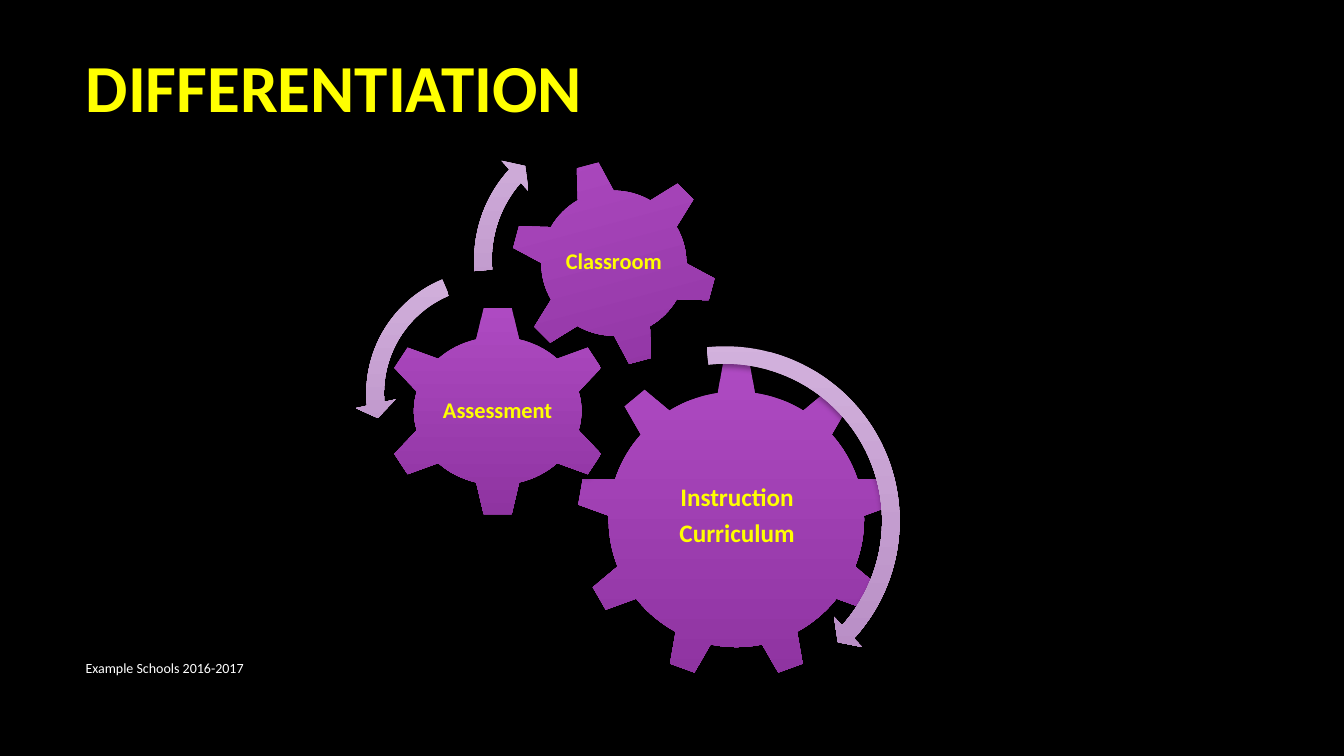
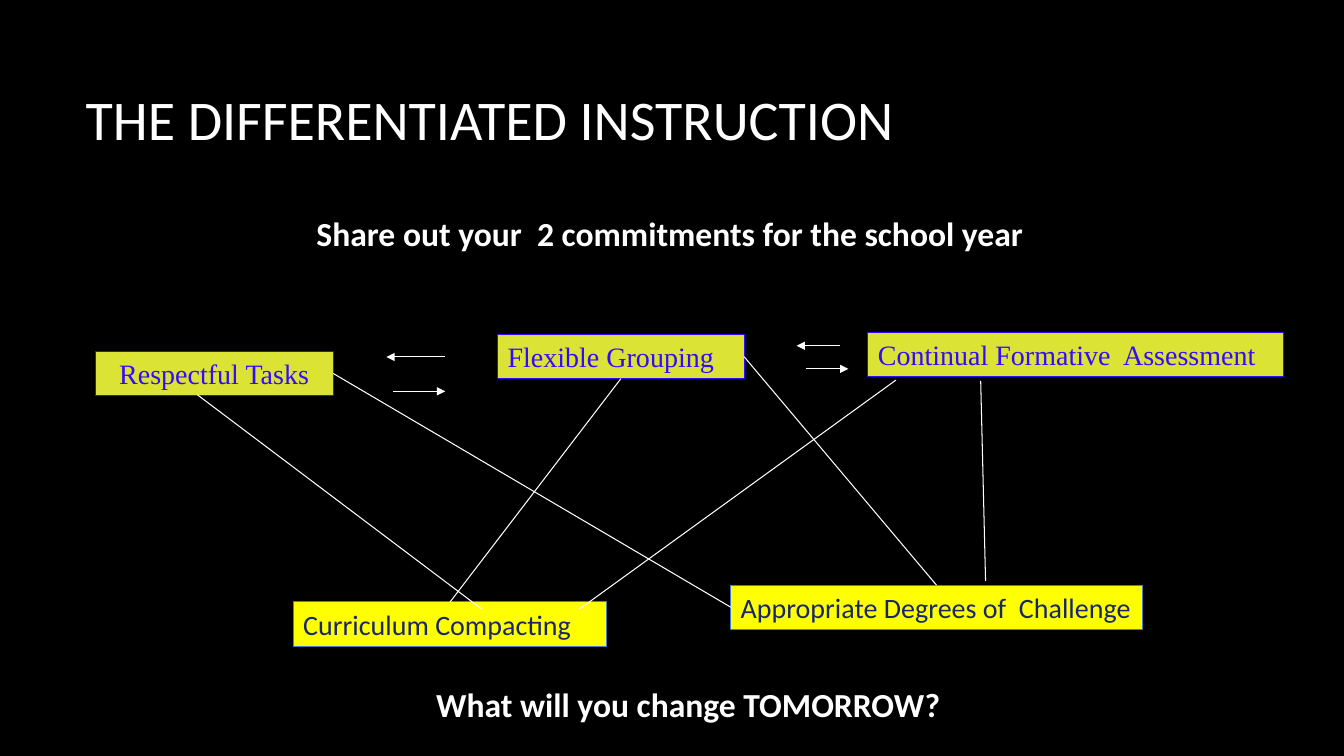
from lxml import etree
from pptx import Presentation
from pptx.dml.color import RGBColor
from pptx.enum import shapes, text
from pptx.oxml import ns
from pptx.util import Pt

BLACK, WHITE, YELLOW = "000000", "FFFFFF", "FFFF00"
VIOLET, LILAC = ("AE4AC2", "8F34A1"), ("D3B2DD", "B488C1")
LIME, INDIGO, BLUE, NAVY = "DBE334", "330AFF", "477BD1", "18276C"
LEFT, CENTER = text.PP_ALIGN.LEFT, text.PP_ALIGN.CENTER
TOP, LEFT_SIDE, BOTTOM, RIGHT_SIDE = range(4)


def color(hex_code):
    return RGBColor.from_string(hex_code)


def write(frame, lines, size, hex_code, bold=False, font="Calibri", align=LEFT):
    """Fill a text frame with one paragraph per line, centred vertically."""
    frame.word_wrap = True
    frame.vertical_anchor = text.MSO_ANCHOR.MIDDLE
    for index, line in enumerate(lines):
        paragraph = frame.paragraphs[0] if index == 0 else frame.add_paragraph()
        paragraph.alignment = align
        run = paragraph.add_run()
        run.text = line
        run.font.name, run.font.size, run.font.bold = font, Pt(size), bold
        run.font.color.rgb = color(hex_code)


prs = Presentation()
prs.slide_width, prs.slide_height = Pt(960), Pt(540)
background = prs.slide_master.background.fill
background.solid()
background.fore_color.rgb = color(BLACK)

slides = []
for heading, top, size, hex_code, bold in [
    ("DIFFERENTIATION", 4, 48, YELLOW, True),
    ("THE DIFFERENTIATED INSTRUCTION", 27, 40, WHITE, False),
]:
    slide = prs.slides.add_slide(prs.slide_layouts[5])
    title = slide.shapes.title
    title.left, title.top, title.width, title.height = Pt(54), Pt(top), Pt(798), Pt(114)
    write(title.text_frame, [heading], size, hex_code, bold)
    slides.append(slide)
gears_slide, links_slide = slides

# Slide 1: interlocking gears with turning arrows
footer = gears_slide.shapes.add_textbox(Pt(54), Pt(462), Pt(616), Pt(30))
write(footer.text_frame, ["Example Schools 2016-2017"], 10, WHITE)

KIND = shapes.MSO_SHAPE
for kind, left, top, width, height, rotation, adjustments, shades in [
    (KIND.GEAR_9, 412, 257, 228, 228, 0, [], VIOLET),
    (KIND.GEAR_6, 273, 218, 165, 151, 0, [], VIOLET),
    (KIND.GEAR_6, 364.5, 114, 148, 148, 345, [], VIOLET),
    (KIND.CIRCULAR_ARROW, 385, 239, 266, 266, 0,
     [0.047, 2.99, 25.289, 158.341, 0.055], LILAC),
    (KIND.LEFT_CIRCULAR_ARROW, 253.5, 184.5, 193, 193, 0,
     [0.065, 4.3, 104.891, 148.378, 0.075], LILAC),
    (KIND.CIRCULAR_ARROW, 330.5, 81.5, 208, 208, 0,
     [0.06, 3.941, 133.138, 105.082, 0.07], LILAC),
]:
    part = gears_slide.shapes.add_shape(kind, Pt(left), Pt(top), Pt(width), Pt(height))
    part.rotation = rotation
    for index, value in enumerate(adjustments):
        part.adjustments[index] = value
    part.fill.gradient()
    part.fill.gradient_angle = 270
    for stop, shade in zip(part.fill.gradient_stops, shades):
        stop.color.rgb = color(shade)
    part.line.fill.background()
    part.shadow.inherit = False
    effects = part._element.spPr.find(ns.qn("a:effectLst"))
    shadow = etree.SubElement(effects, ns.qn("a:outerShdw"), blurRad=str(Pt(4)),
                              dist=str(Pt(3)), dir="5400000", rotWithShape="0")
    tint = etree.SubElement(shadow, ns.qn("a:srgbClr"), val=BLACK)
    etree.SubElement(tint, ns.qn("a:alpha"), val="35000")

for lines, left, top, width, height, size in [
    (["Instruction", "Curriculum"], 458, 310, 137, 118, 18),
    (["Assessment"], 313, 256, 85, 75, 16),
    (["Classroom"], 397, 146, 83, 83, 16),
]:
    label = gears_slide.shapes.add_textbox(Pt(left), Pt(top), Pt(width), Pt(height))
    frame = label.text_frame
    frame.margin_left = frame.margin_right = frame.margin_top = frame.margin_bottom = Pt(2)
    write(frame, lines, size, YELLOW, True, align=CENTER)
    for paragraph in frame.paragraphs:
        paragraph.line_spacing = 0.9
        paragraph.space_after = Pt(0.35 * size)

# Slide 2: linked practices
practices = {}
for name, left, top, width, fill, edge, ink, font, align in [
    ("Respectful Tasks", 68, 251, 170, LIME, INDIGO, INDIGO, "Times New Roman", CENTER),
    ("Flexible Grouping", 355.5, 239, 176, LIME, INDIGO, INDIGO, "Times New Roman", LEFT),
    ("Continual Formative  Assessment", 620, 237.5, 297, LIME, INDIGO, INDIGO,
     "Times New Roman", LEFT),
    ("Curriculum Compacting", 209.5, 430, 224, YELLOW, BLUE, NAVY, "Calibri", LEFT),
    ("Appropriate Degrees of  Challenge", 522, 418, 294, YELLOW, BLUE, NAVY,
     "Calibri", LEFT),
]:
    practice = links_slide.shapes.add_shape(KIND.RECTANGLE, Pt(left), Pt(top),
                                            Pt(width), Pt(31.5))
    practice.shadow.inherit = False
    practice.fill.solid()
    practice.fill.fore_color.rgb = color(fill)
    practice.line.color.rgb = color(edge)
    practice.line.width = Pt(0.75)
    write(practice.text_frame, [name], 20, ink, font=font, align=align)
    practices[name] = practice

respectful, flexible, continual, compacting, challenge = practices.values()
for start, end, begin_joint, end_joint, arrow in [
    ((141, 282), (344, 435), None, None, False),
    ((321.5, 430), (443.5, 270.5), (compacting, TOP), (flexible, BOTTOM), False),
    ((238, 267), (522, 434), (respectful, RIGHT_SIDE), (challenge, LEFT_SIDE), False),
    ((531.5, 255), (669, 418), (flexible, RIGHT_SIDE), (challenge, TOP), False),
    ((640, 271.5), (414, 435), None, None, False),
    ((700.5, 272), (704, 415), None, None, False),
    ((281, 279.5), (318, 279.5), None, None, True),
    ((576, 263.5), (606, 263.5), None, None, True),
    ((318, 255), (276, 255), None, None, True),
    ((600, 247), (569, 247), None, None, True),
]:
    link = links_slide.shapes.add_connector(
        shapes.MSO_CONNECTOR.STRAIGHT, *(Pt(value) for value in start + end))
    if begin_joint:
        link.begin_connect(*begin_joint)
        link.end_connect(*end_joint)
    link.line.color.rgb = color(WHITE)
    link.line.width = Pt(0.75)
    if arrow:
        etree.SubElement(link.line._get_or_add_ln(), ns.qn("a:tailEnd"), type="triangle")
    etree.SubElement(link._element.spPr, ns.qn("a:effectLst"))

for prompt, left, top, width in [
    ("Share out your  2 commitments for the school year", 219, 148.5, 529),
    ("What will you change TOMORROW?", 304.5, 485, 468),
]:
    box = links_slide.shapes.add_textbox(Pt(left), Pt(top), Pt(width), Pt(36))
    write(box.text_frame, [prompt], 24, WHITE, True)

prs.save("out.pptx")
